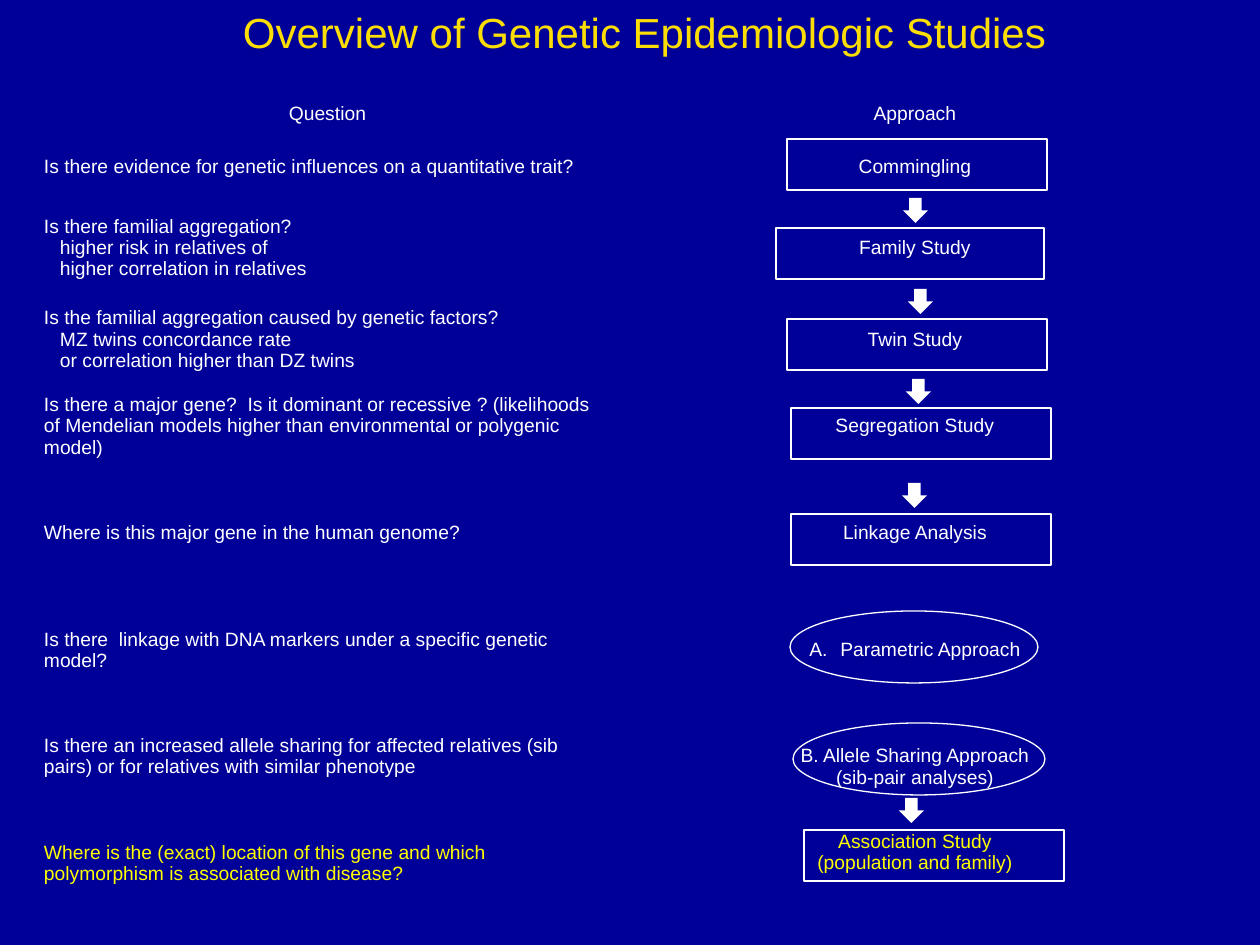
from lxml import etree
from pptx import Presentation
from pptx import util as u
from pptx.dml.color import RGBColor
from pptx.enum import shapes, text
from pptx.oxml.ns import qn

PX = 914400 // 126
COLORS = {"back": "000099", "title": "FCDE04", "text": "FFFFFF", "accent": "FFFF00"}
LEFT, CENTER = text.PP_ALIGN.LEFT, text.PP_ALIGN.CENTER
BLANK_LINE = 21


def rgb(name):
    return RGBColor.from_string(COLORS[name])


def write(tf, lines, size=11, color="text", align=CENTER, hang=0, letter=False):
    """Write one paragraph per line; hang indents every line after the first."""
    tf.word_wrap = True
    tf.vertical_anchor = text.MSO_ANCHOR.MIDDLE
    for i, line in enumerate(lines):
        p = tf.paragraphs[0] if i == 0 else tf.add_paragraph()
        p.alignment = align
        pPr = p._p.get_or_add_pPr()
        if hang and i:
            pPr.set("marL", str(hang * PX))
        if letter:
            pPr.set("marL", str(31 * PX))
            pPr.set("indent", str(-31 * PX))
            etree.SubElement(pPr, qn("a:buFont"), typeface="+mj-lt")
            etree.SubElement(pPr, qn("a:buAutoNum"), type="alphaUcPeriod")
        r = p.add_run()
        r.text = line
        r.font.size = u.Pt(size)
        r.font.name = "Arial"
        r.font.color.rgb = rgb(color)


prs = Presentation()
prs.slide_width, prs.slide_height = u.Inches(10), u.Inches(7.5)
slide = prs.slides.add_slide(prs.slide_layouts[5])
slide.background.fill.solid()
slide.background.fill.fore_color.rgb = rgb("back")

# Title
title = slide.shapes.title
title.left, title.top, title.width, title.height = (v * PX for v in (29, 0, 1231, 63))
write(title.text_frame, ["Overview of Genetic Epidemiologic Studies"], size=24, color="title")

# Questions and approaches: row height, question lines, approach lines
rows = [
    (23, [], []),
    (40, ["Question"], ["Approach"]),
    (67, ["Is there evidence for genetic influences on a quantitative trait?"], ["Commingling"]),
    (94, ["Is there familial aggregation?", "higher risk in relatives of",
          "higher correlation in relatives"], ["Family Study"]),
    (90, ["Is the familial aggregation caused by genetic factors?", "MZ twins concordance rate",
          "or correlation higher than DZ twins"], ["Twin Study"]),
    (83, ["Is there a major gene?  Is it dominant or recessive ? (likelihoods of Mendelian "
          "models higher than environmental or polygenic model)"], ["Segregation Study"]),
    (130, ["Where is this major gene in the human genome?"], ["Linkage Analysis"]),
    (105, ["Is there  linkage with DNA markers under a specific genetic model?"],
     ["Parametric Approach"]),
    (107, ["Is there an increased allele sharing for affected relatives (sib pairs) or for "
           "relatives with similar phenotype"],
     ["B. Allele Sharing Approach", "(sib-pair analyses)"]),
    (107, ["Where is the (exact) location of this gene and which polymorphism is associated "
           "with disease?"], ["Association Study", "(population and family)"]),
]
columns = [575, 600, 11]
frame = slide.shapes.add_table(len(rows), len(columns), 40 * PX, 70 * PX,
                               sum(columns) * PX, sum(row[0] for row in rows) * PX)
table = frame.table
table.first_row = table.horz_banding = False
table._tbl.tblPr.find(qn("a:tableStyleId")).text = "{2D5ABB26-0587-4C30-8999-92F81FD0307C}"
for column, width in zip(table.columns, columns):
    column.width = width * PX

for i, (height, question, approach) in enumerate(rows):
    table.rows[i].height = height * PX
    color = "accent" if i == len(rows) - 1 else "text"
    for j, lines in enumerate((question, approach, [])):
        cell = table.cell(i, j)
        cell.fill.background()
        cell.margin_left = cell.margin_right = 4 * PX
        cell.margin_top = cell.margin_bottom = 0
        cell.vertical_anchor = text.MSO_ANCHOR.MIDDLE
        if lines:
            write(cell.text_frame, lines, color=color,
                  align=LEFT if j == 0 and i > 1 else CENTER,
                  hang=16 if j == 0 else 0, letter=lines == ["Parametric Approach"])
        else:
            etree.SubElement(cell.text_frame.paragraphs[0]._p, qn("a:endParaRPr"), sz="1100")
table.cell(0, 0).merge(table.cell(0, 2))
table.cell(8, 1).margin_top = BLANK_LINE * PX
table.cell(9, 1).margin_bottom = BLANK_LINE * PX

# Arrows between the steps
for x, y in [(903, 198), (908, 289), (906, 379), (902, 483), (899, 798)]:
    sp = slide.shapes.add_shape(shapes.MSO_SHAPE.DOWN_ARROW, x * PX, y * PX, 25 * PX, 25 * PX)
    sp.shadow.inherit = False
    sp.fill.solid()
    sp.fill.fore_color.rgb = rgb("text")
    sp.line.fill.background()

# Outlines around the approaches
RECT, OVAL = shapes.MSO_SHAPE.RECTANGLE, shapes.MSO_SHAPE.OVAL
outlines = [
    (RECT, 787, 139, 260, 51),
    (RECT, 776, 228, 268, 51),
    (RECT, 787, 319, 260, 51),
    (RECT, 791, 408, 260, 51),
    (RECT, 791, 514, 260, 51),
    (OVAL, 790, 611, 248, 72),
    (OVAL, 793, 723, 252, 72),
    (RECT, 804, 830, 260, 51),
]
for kind, *box in outlines:
    sp = slide.shapes.add_shape(kind, *(v * PX for v in box))
    sp.shadow.inherit = False
    sp.fill.background()
    sp.line.color.rgb = rgb("text")
    sp.line.width = u.Pt(0.75)

prs.save("out.pptx")
